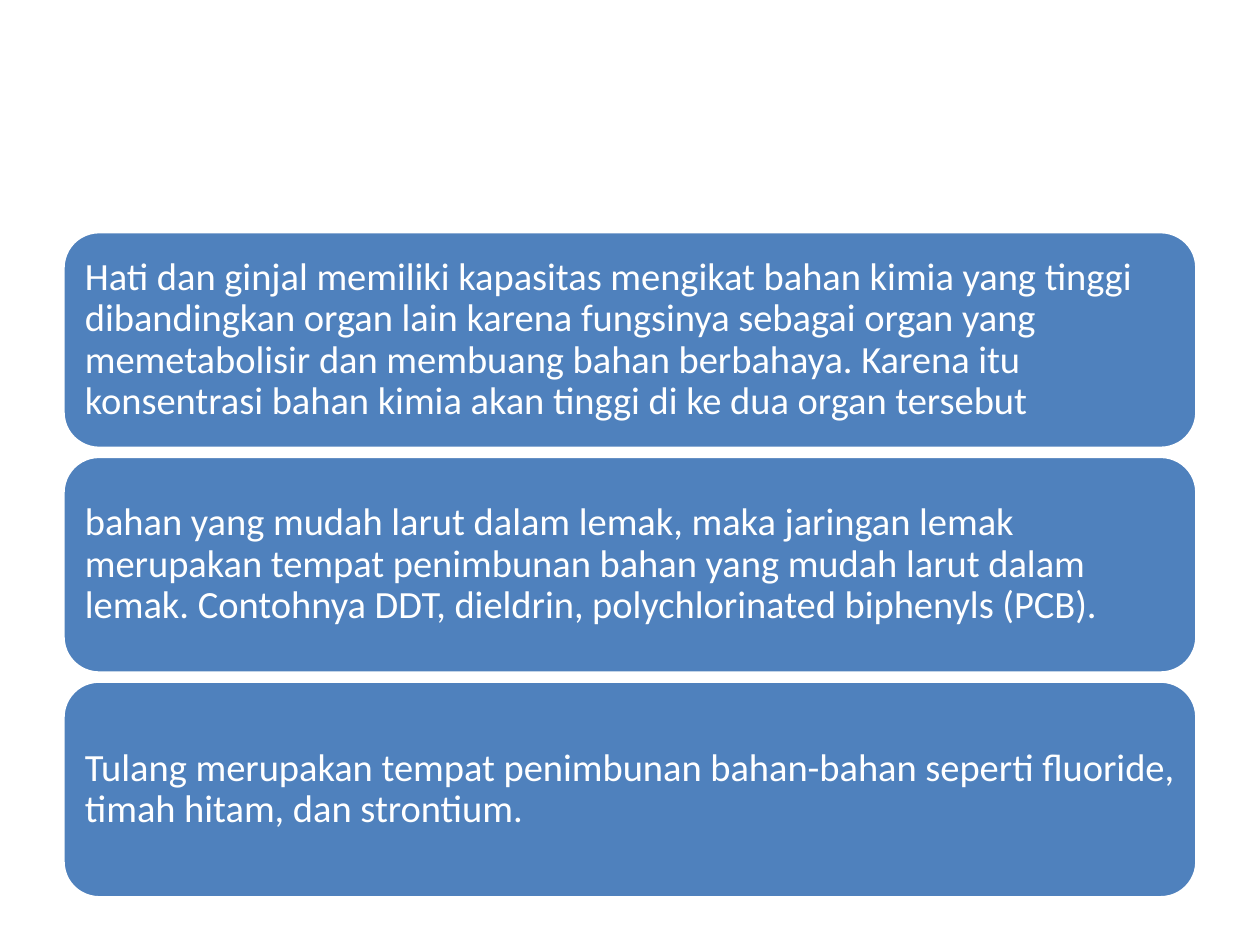
from dataclasses import dataclass

from pptx import Presentation
from pptx.dml.color import RGBColor
from pptx.enum import shapes, text
from pptx.util import Cm, Pt


@dataclass(frozen=True)
class Theme:
    panel: RGBColor = RGBColor(0x4F, 0x81, 0xBD)
    white: RGBColor = RGBColor(0xFF, 0xFF, 0xFF)
    font: str = "Calibri"
    body_size: int = 22
    outline: int = 2


THEME = Theme()

STORAGE_SITES = [
    "Hati dan ginjal memiliki kapasitas mengikat bahan kimia yang tinggi "
    "dibandingkan organ lain karena fungsinya sebagai organ yang "
    "memetabolisir dan membuang bahan berbahaya. Karena itu konsentrasi "
    "bahan kimia akan tinggi di ke dua organ tersebut",
    "bahan yang mudah larut dalam lemak, maka jaringan lemak merupakan "
    "tempat penimbunan bahan yang mudah larut dalam lemak. Contohnya DDT, "
    "dieldrin, polychlorinated biphenyls (PCB).",
    "Tulang merupakan tempat penimbunan bahan-bahan seperti fluoride, "
    "timah hitam, dan strontium.",
]


def add_panel(slide, left, top, width, height, statement):
    panel = slide.shapes.add_shape(
        shapes.MSO_SHAPE.ROUNDED_RECTANGLE, Cm(left), Cm(top), Cm(width), Cm(height))
    panel.shadow.inherit = False
    panel.fill.solid()
    panel.fill.fore_color.rgb = THEME.panel
    panel.line.color.rgb = THEME.white
    panel.line.width = Pt(THEME.outline)

    frame = panel.text_frame
    frame.word_wrap = True
    frame.vertical_anchor = text.MSO_ANCHOR.MIDDLE
    frame.margin_left = frame.margin_right = Cm(0.23)
    frame.margin_top = frame.margin_bottom = Cm(0.23)
    frame.text = statement

    paragraph = frame.paragraphs[0]
    paragraph.alignment = text.PP_ALIGN.LEFT
    paragraph.line_spacing = 0.9
    font = paragraph.runs[0].font
    font.name = THEME.font
    font.size = Pt(THEME.body_size)
    font.color.rgb = THEME.white


def add_panel_stack(slide, left, top, width, height, statements, gap=0.16):
    """Share the height equally among the panels, with a gap between them."""
    panel_height = (height - gap * (len(statements) - 1)) / len(statements)
    for row, statement in enumerate(statements):
        add_panel(slide, left, top + row * (panel_height + gap),
                  width, panel_height, statement)


def main():
    deck = Presentation()
    deck.slide_width, deck.slide_height = Cm(25.4), Cm(19.05)
    slide = deck.slides.add_slide(deck.slide_layouts.get_by_name("Blank"))
    add_panel_stack(slide, 1.27, 4.67, 22.86, 13.43, STORAGE_SITES)
    deck.save("out.pptx")


if __name__ == "__main__":
    main()
